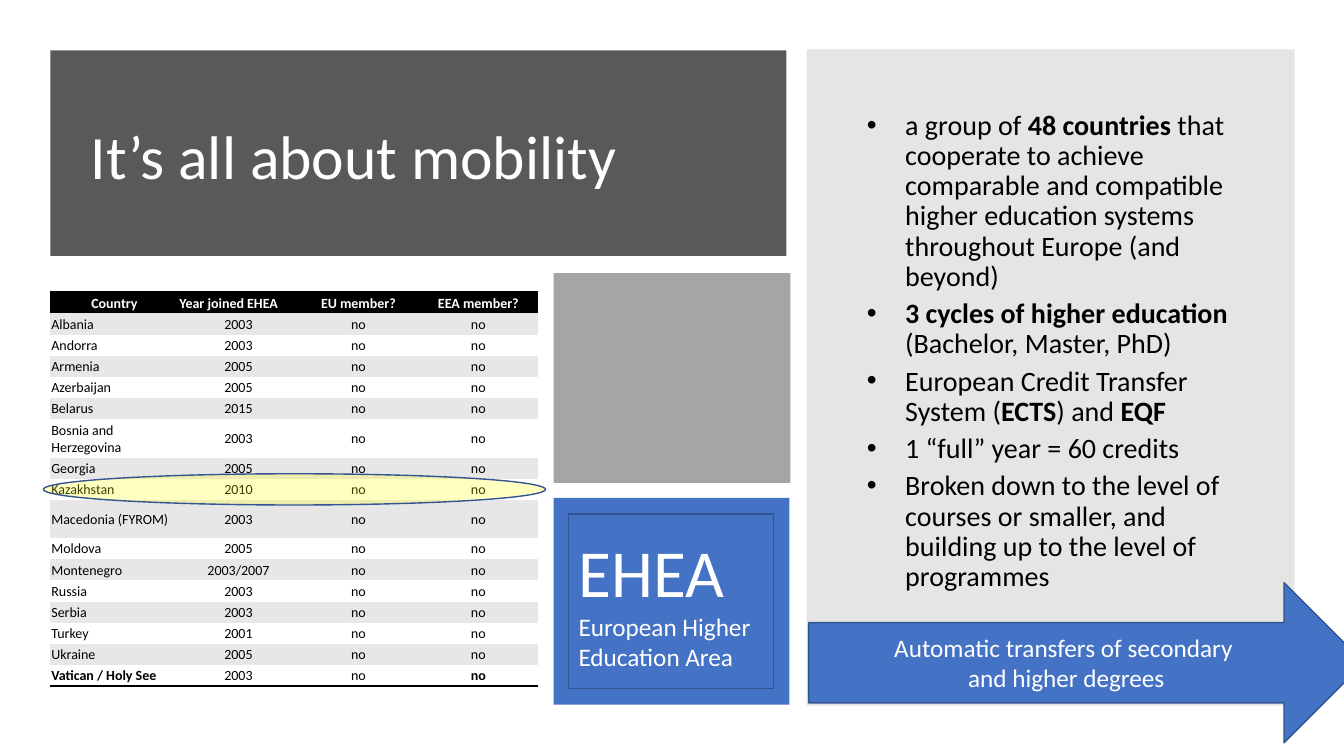
from pptx import Presentation
from pptx.dml.color import RGBColor
from pptx.enum.shapes import MSO_SHAPE
from pptx.enum.text import MSO_ANCHOR, PP_ALIGN
from pptx.oxml import parse_xml
from pptx.oxml.ns import nsdecls, qn
from pptx.util import Pt
from lxml import etree

PX = 9144  # 100 px to the inch
RECT, ARROW, OVAL = MSO_SHAPE.RECTANGLE, MSO_SHAPE.RIGHT_ARROW, MSO_SHAPE.OVAL
LEFT, CENTER, MIDDLE = PP_ALIGN.LEFT, PP_ALIGN.CENTER, MSO_ANCHOR.MIDDLE
BLACK = RGBColor(0x00, 0x00, 0x00)
WHITE = RGBColor(0xFF, 0xFF, 0xFF)
DARK = RGBColor(0x59, 0x59, 0x59)
GRAY = RGBColor(0xA5, 0xA5, 0xA5)
MID = RGBColor(0x80, 0x80, 0x80)
BAND = RGBColor(0xE7, 0xE7, 0xE7)
BLUE = RGBColor(0x44, 0x72, 0xC4)
NAVY = RGBColor(0x32, 0x54, 0x91)
YELLOW = RGBColor(0xFF, 0xFF, 0x00)

deck = Presentation()
deck.slide_width, deck.slide_height = 1333 * PX, 750 * PX
slide = deck.slides.add_slide(deck.slide_layouts[6])


def draw(kind, place, fill, line=None, alpha=None):
    """Add a preset shape; alpha is its opacity in percent."""
    shape = slide.shapes.add_shape(kind, *[n * PX for n in place])
    shape.shadow.inherit = False
    shape.fill.solid()
    shape.fill.fore_color.rgb = fill
    if alpha:
        tint = shape.fill._xPr.find(".//" + qn("a:srgbClr"))
        etree.SubElement(tint, qn("a:alpha"), val=str(alpha * 1000))
    if line:
        shape.line.color.rgb = line
        shape.line.width = Pt(1)
    else:
        shape.line.fill.background()
    return shape


def write(para, runs, color, align=LEFT):
    """Add runs of (text, size, bold); a newline stands for a line break."""
    para.alignment = align
    for text, size, bold in runs:
        if text == "\n":
            para.add_line_break()
            continue
        run = para.add_run()
        run.text = text
        run.font.name = "Calibri"
        run.font.size = Pt(size)
        run.font.bold = bold
        run.font.color.rgb = color


# Panels and title
draw(RECT, (50, 50, 730, 204), DARK)
title = slide.shapes.add_textbox(80 * PX, 80 * PX, 666 * PX, 156 * PX).text_frame
title.word_wrap = True
title.vertical_anchor = MIDDLE
title.paragraphs[0].line_spacing = 0.9
write(title.paragraphs[0], [("It’s all about mobility", 44, False)], WHITE)
draw(RECT, (549, 271, 235, 208), GRAY)
draw(RECT, (549, 494, 234, 205), BLUE)
draw(RECT, (800, 49, 484, 651), MID, alpha=20)

# Bullets
points = [
    [("a group of ", False), ("48 countries ", True),
     ("that cooperate to achieve comparable and compatible higher education "
      "systems throughout Europe (and beyond)", False)],
    [("3 cycles of higher education ", True), ("(Bachelor, Master, PhD)", False)],
    [("European Credit Transfer System (", False), ("ECTS", True),
     (") and ", False), ("EQF", True)],
    [("1 “full” year = 60 credits", False)],
    [("Broken down to the level of courses or smaller, and building up to "
      "the level of programmes", False)],
]
body = slide.shapes.add_textbox(810 * PX, 73 * PX, 444 * PX, 552 * PX).text_frame
body.word_wrap = True
body.vertical_anchor = MIDDLE
for i, point in enumerate(points):
    para = body.add_paragraph() if i else body.paragraphs[0]
    para.line_spacing = 0.9
    para.space_before = Pt(5)
    write(para, [(text, 20, bold) for text, bold in point], BLACK)
    props = para._p.get_or_add_pPr()
    props.set("marL", str(78 * PX))
    props.set("indent", str(-38 * PX))
    etree.SubElement(props, qn("a:buFont"), typeface="Arial")
    etree.SubElement(props, qn("a:buChar"), char="•")

# Country table
head = ["Country", "Year joined EHEA", "EU member?", "EEA member?"]
joined = [
    ("Albania", "2003"), ("Andorra", "2003"), ("Armenia", "2005"),
    ("Azerbaijan", "2005"), ("Belarus", "2015"),
    ("Bosnia and Herzegovina", "2003"), ("Georgia", "2005"),
    ("Kazakhstan", "2010"), ("Macedonia (FYROM)", "2003"),
    ("Moldova", "2005"), ("Montenegro", "2003/2007"), ("Russia", "2003"),
    ("Serbia", "2003"), ("Turkey", "2001"), ("Ukraine", "2005"),
    ("Vatican / Holy See", "2003"),
]
rows = [head] + [[land, year, "no", "no"] for land, year in joined]
last = len(rows) - 1
tall = (6, 9)
table = slide.shapes.add_table(len(rows), 4, 50 * PX, 290 * PX,
                               484 * PX, 391 * PX).table
for c, col in enumerate(table.columns):
    col.width = (119 if c else 127) * PX
for r, row in enumerate(rows):
    table.rows[r].height = (38 if r in tall else 21) * PX
    edges = {0: ("lnT", "lnB"), last: ("lnB",)}.get(r, ())
    for c, text in enumerate(row):
        cell = table.cell(r, c)
        cell.margin_left = cell.margin_right = cell.margin_top = PX
        cell.margin_bottom = 0
        cell.vertical_anchor = MIDDLE
        bold = r == 0 or (r == last and c in (0, 3))
        align = LEFT if (r == 0) == (c == 1) and c < 2 else CENTER
        write(cell.text_frame.paragraphs[0], [(text, 10, bold)],
              BLACK if r else WHITE, align)
        props = cell._tc.get_or_add_tcPr()
        for edge in ("lnL", "lnR", "lnT", "lnB"):
            ink = ('<a:solidFill><a:srgbClr val="000000"/></a:solidFill>'
                   if edge in edges else "<a:noFill/>")
            props.append(parse_xml(
                f'<a:{edge} {nsdecls("a")} w="{Pt(2)}">{ink}</a:{edge}>'))
        cell.fill.solid()
        cell.fill.fore_color.rgb = (BAND if r % 2 else WHITE) if r else BLACK

# Callouts
area = draw(RECT, (564, 510, 203, 173), BLUE, NAVY).text_frame
arrow = draw(ARROW, (802, 578, 551, 159), BLUE, NAVY).text_frame
area.word_wrap = arrow.word_wrap = True
area.vertical_anchor = arrow.vertical_anchor = MIDDLE
write(area.paragraphs[0],
      [("EHEA ", 48, False), ("\n", 48, False),
       ("European Higher Education Area", 18, False)], WHITE)
write(arrow.paragraphs[0],
      [("Automatic transfers of secondary ", 18, False), ("\n", 18, False),
       ("and higher degrees", 18, False)], WHITE, CENTER)
draw(OVAL, (43, 470, 498, 31), YELLOW, NAVY, 25)

deck.save("out.pptx")
